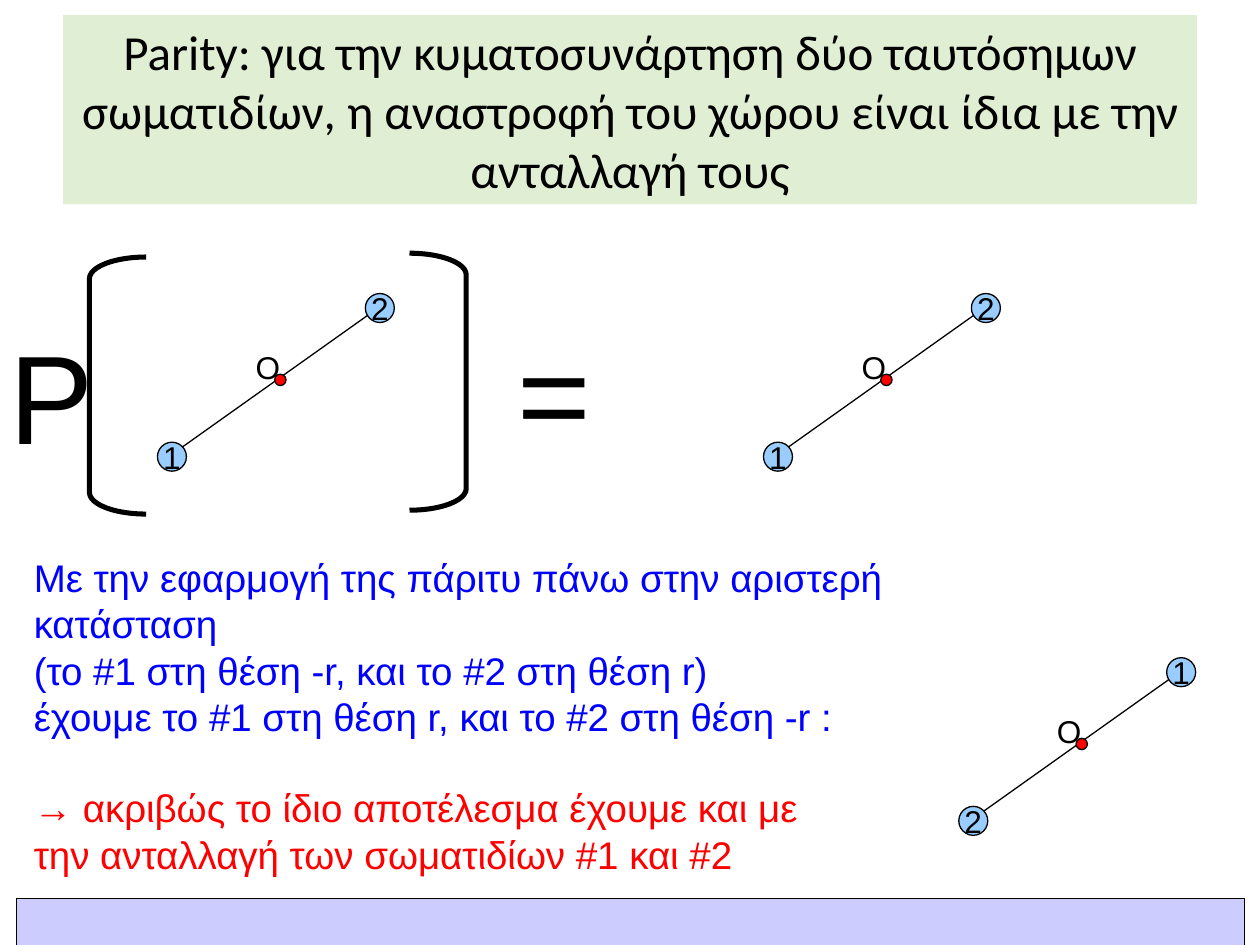
from dataclasses import dataclass

import pptx
import pptx.dml.color
import pptx.enum.shapes
import pptx.enum.text
import pptx.oxml
import pptx.util
from pptx.util import Inches

SHAPES = pptx.enum.shapes.MSO_SHAPE
ALIGN = pptx.enum.text.PP_ALIGN
ANCHOR = pptx.enum.text.MSO_ANCHOR


@dataclass(frozen=True)
class Theme:
    title_font: str = "Calibri"
    body_font: str = "Arial"
    title_size: int = 28
    label_size: int = 18
    symbol_size: int = 72
    body_size: int = 22
    thin: float = 0.75
    thick: float = 2.89
    ink: str = "000000"
    title_fill: str = "E0EFD4"
    footer_fill: str = "CCCCFF"
    particle: str = "99CCFF"
    accent: str = "FF0000"
    statement: str = "0000FF"


class SlideBuilder:
    """Draw styled elements on the current slide."""

    def __init__(self, slide, theme):
        self.slide = slide
        self.theme = theme

    def color(self, value):
        return pptx.dml.color.RGBColor.from_string(value)

    def style(self, paragraph, size, color=None, font=None):
        paragraph.font.size = pptx.util.Pt(size)
        paragraph.font.name = font or self.theme.body_font
        paragraph.font.color.rgb = self.color(color or self.theme.ink)

    def title(self, text, left, top, width, height):
        shape = self.slide.shapes.title
        shape.left, shape.top = Inches(left), Inches(top)
        shape.width, shape.height = Inches(width), Inches(height)
        shape.fill.solid()
        shape.fill.fore_color.rgb = self.color(self.theme.title_fill)
        frame = shape.text_frame
        frame.text = text
        frame.word_wrap = True
        frame.auto_size = pptx.enum.text.MSO_AUTO_SIZE.NONE
        frame.vertical_anchor = ANCHOR.MIDDLE
        frame.paragraphs[0].alignment = ALIGN.CENTER
        self.style(frame.paragraphs[0], self.theme.title_size, font=self.theme.title_font)

    def shape(self, kind, left, top, width, height, fill=None, line_width=None):
        shape = self.slide.shapes.add_shape(
            kind, Inches(left), Inches(top), Inches(width), Inches(height))
        shape.shadow.inherit = False
        if fill:
            shape.fill.solid()
            shape.fill.fore_color.rgb = self.color(fill)
        else:
            shape.fill.background()
        shape.line.color.rgb = self.color(self.theme.ink)
        shape.line.width = pptx.util.Pt(line_width or self.theme.thin)
        return shape

    def bracket(self, kind, left, top):
        shape = self.shape(kind, left, top, 0.45, 2.04, line_width=self.theme.thick)
        shape.adjustments[0] = 0.38

    def particle(self, label, left, top):
        shape = self.shape(SHAPES.OVAL, left, top, 0.23, 0.23, self.theme.particle)
        frame = shape.text_frame
        frame.text = label
        frame.word_wrap = False
        frame.vertical_anchor = ANCHOR.MIDDLE
        frame.paragraphs[0].alignment = ALIGN.CENTER
        self.style(frame.paragraphs[0], self.theme.label_size)

    def line(self, start_x, start_y, end_x, end_y):
        connector = self.slide.shapes.add_connector(
            pptx.enum.shapes.MSO_CONNECTOR.STRAIGHT,
            Inches(start_x), Inches(start_y), Inches(end_x), Inches(end_y))
        connector.line.color.rgb = self.color(self.theme.ink)
        connector.line.width = pptx.util.Pt(self.theme.thin)
        properties = connector._element.spPr
        properties.append(properties.makeelement(pptx.oxml.ns.qn("a:effectLst"), {}))

    def text_frame(self, left, top, width, height):
        box = self.slide.shapes.add_textbox(
            Inches(left), Inches(top), Inches(width), Inches(height))
        box.text_frame.word_wrap = True
        return box.text_frame

    def label(self, text, size, left, top, width, height):
        frame = self.text_frame(left, top, width, height)
        frame.text = text
        self.style(frame.paragraphs[0], size)

    def pair(self, lower, upper, left, top):
        self.line(left + 0.11, top + 1.28, left + 1.7, top + 0.15)
        self.particle(lower, left, top + 1.18)
        self.particle(upper, left + 1.65, top)
        self.shape(SHAPES.OVAL, left + 0.93, top + 0.64, 0.09, 0.09, self.theme.accent)
        self.label("Ο", self.theme.label_size, left + 0.68, top + 0.38, 0.39, 0.4)

    def explanation(self, statements, conclusion, left, top, width, height):
        frame = self.text_frame(left, top, width, height)
        frame.text = "\n".join(statements)
        for paragraph in frame.paragraphs:
            self.style(paragraph, self.theme.body_size, self.theme.statement)
        paragraph = frame.add_paragraph()
        paragraph.space_before = pptx.util.Pt(26)
        self.style(paragraph, self.theme.body_size, self.theme.accent)
        arrow = paragraph.add_run()
        arrow.text = "→ "
        arrow.font.bold = True
        first, second = conclusion
        paragraph.add_run().text = first
        paragraph.add_line_break()
        paragraph.add_run().text = second


def main():
    presentation = pptx.Presentation()
    presentation.slide_width, presentation.slide_height = Inches(10), Inches(7.5)
    slide = presentation.slides.add_slide(presentation.slide_layouts[5])
    theme = Theme()
    builder = SlideBuilder(slide, theme)

    builder.shape(SHAPES.RECTANGLE, 0.13, 7.13, 9.75, 0.54, theme.footer_fill)
    builder.title(
        "Parity: για την κυματοσυνάρτηση δύο ταυτόσημων σωματιδίων, "
        "η αναστροφή του χώρου είναι ίδια με την ανταλλαγή τους",
        0.5, 0.12, 9, 1.5)

    builder.label("P", theme.symbol_size, -0.02, 2.48, 0.86, 1.3)
    builder.bracket(SHAPES.LEFT_BRACKET, 0.71, 2.04)
    builder.bracket(SHAPES.RIGHT_BRACKET, 3.25, 2.01)
    builder.label("=", theme.symbol_size, 4.01, 2.45, 0.94, 1.3)

    for lower, upper, left, top in (
            ("1", "2", 1.25, 2.33), ("1", "2", 6.06, 2.33), ("2", "1", 7.61, 5.22)):
        builder.pair(lower, upper, left, top)

    builder.explanation(
        ("Με την εφαρμογή της πάριτυ πάνω στην αριστερή κατάσταση",
         "(το #1 στη θέση -r, και το #2 στη θέση r)",
         "έχουμε το #1 στη θέση r, και το #2 στη θέση -r :"),
        ("ακριβώς το ίδιο αποτέλεσμα έχουμε και με",
         "την ανταλλαγή των σωματιδίων #1 και #2"),
        0.17, 4.35, 7.03, 2.66)

    presentation.save("out.pptx")


if __name__ == "__main__":
    main()
